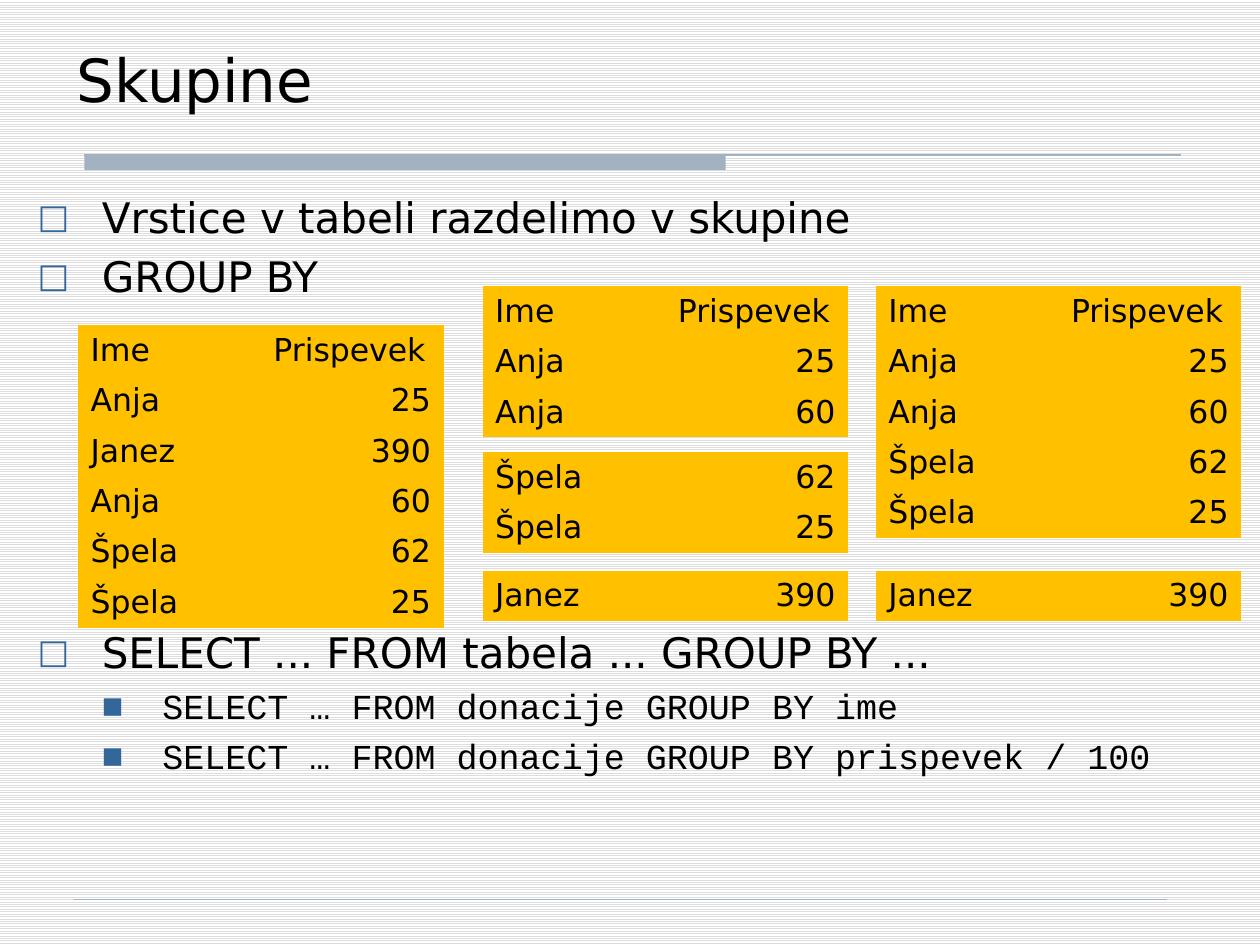
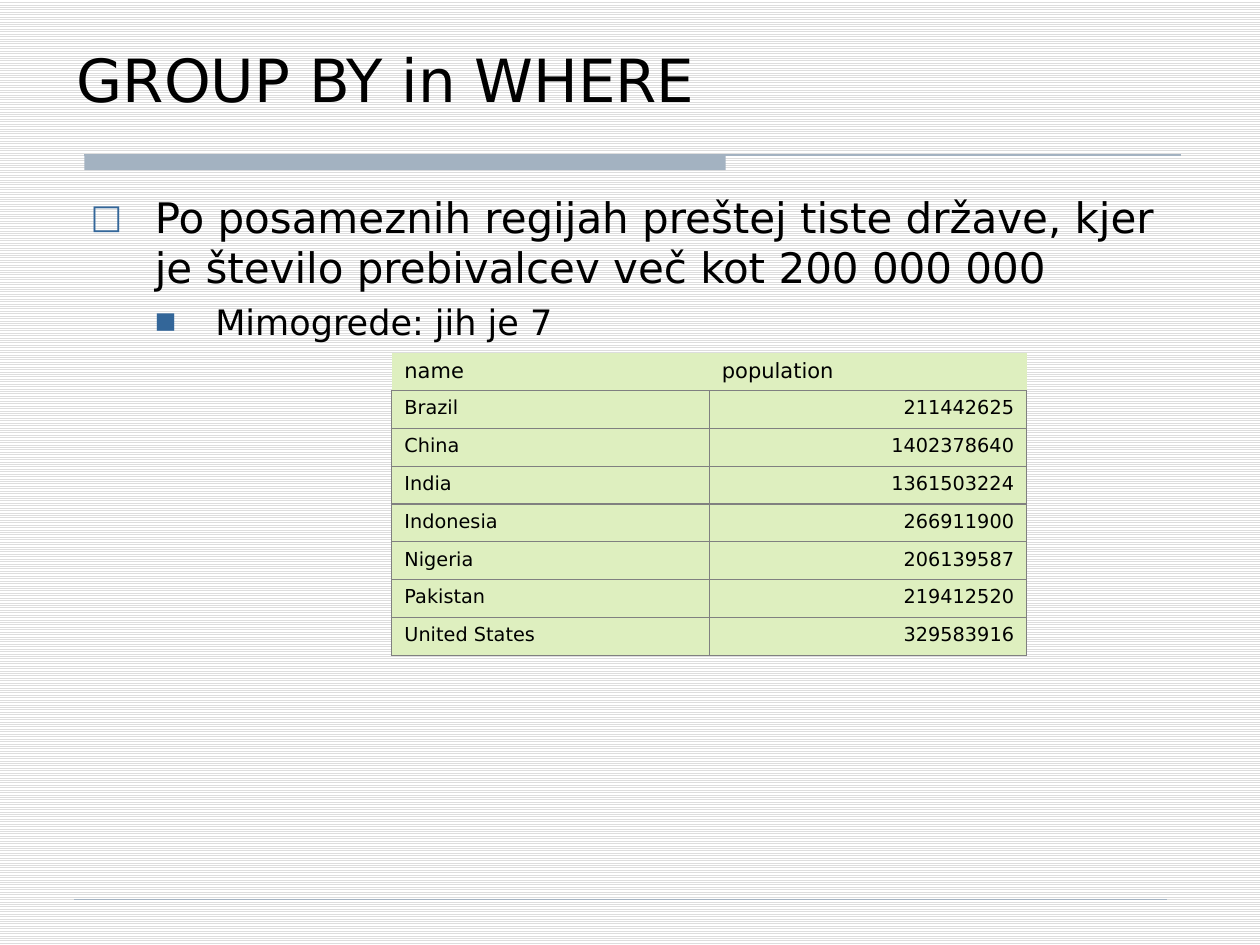
from lxml.etree import SubElement
from pptx import Presentation
from pptx.dml.color import RGBColor
from pptx.enum.dml import MSO_PATTERN
from pptx.enum.shapes import MSO_CONNECTOR, MSO_SHAPE
from pptx.enum.text import MSO_ANCHOR, MSO_AUTO_SIZE, PP_ALIGN
from pptx.oxml.ns import qn
from pptx.util import Inches, Pt

BLACK = RGBColor(0x00, 0x00, 0x00)
WHITE = RGBColor(0xFF, 0xFF, 0xFF)
STRIPE = RGBColor(0xDD, 0xDD, 0xDD)
STEEL = RGBColor(0xA3, 0xB2, 0xC1)
BLUE = RGBColor(0x33, 0x66, 0x99)
AMBER = RGBColor(0xFF, 0xC0, 0x00)
LIME = RGBColor(0xDE, 0xEF, 0xBF)
GREY = RGBColor(0x80, 0x80, 0x80)
SANS = "DejaVu Sans"
MONO = "Courier New"
PLAIN = "{2D5ABB26-0587-4C30-8999-92F81FD0307C}"  # table style without grid

# Bullet levels: sign, sign size, text indent, hanging indent
MARKS = [("□", 80, 0.51, 0.51), ("■", 65, 0.99, 0.48)]


def write(par, text, size=24, font=SANS, align=PP_ALIGN.LEFT, gap=0, level=None):
    """Fill a paragraph; a level gives it that level's bullet."""
    run = par.add_run()
    run.text = text
    run.font.size = Pt(size)
    run.font.name = font
    run.font.color.rgb = BLACK
    par.alignment = align
    par.space_before = Pt(gap)
    if level is None:
        return
    sign, scale, left, hang = MARKS[level]
    par.level = level
    props = par._p.get_or_add_pPr()
    props.set("marL", str(Inches(left)))
    props.set("indent", str(-Inches(hang)))
    SubElement(SubElement(props, qn("a:buClr")), qn("a:srgbClr"), val=str(BLUE))
    SubElement(props, qn("a:buSzPct"), val=str(scale * 1000))
    SubElement(props, qn("a:buFont"), typeface=SANS)
    SubElement(props, qn("a:buChar"), char=sign)


def edge(cell, sides):
    """Draw thin grey borders on the named sides of a cell."""
    props = cell._tc.get_or_add_tcPr()
    for spot, side in enumerate(sides):
        line = props.makeelement(qn("a:ln" + side), {"w": str(Pt(0.75))})
        fill = SubElement(line, qn("a:solidFill"))
        SubElement(fill, qn("a:srgbClr"), val=str(GREY))
        props.insert(spot, line)


# Content: bullets are (text, level, size, font, gap before)
# Tables are (left, top, column width, row height, rows)
head = ("Ime", "Prispevek")
anja = [("Anja", "25"), ("Anja", "60")]
spela = [("Špela", "62"), ("Špela", "25")]
janez = [("Janez", "390")]
mixed = [head, anja[0], janez[0], anja[1], *spela]
lands = [
    ("name", "population"),
    ("Brazil", "211442625"),
    ("China", "1402378640"),
    ("India", "1361503224"),
    ("Indonesia", "266911900"),
    ("Nigeria", "206139587"),
    ("Pakistan", "219412520"),
    ("United States", "329583916"),
]
pages = [
    {
        "title": "Skupine",
        "left": 0.2,
        "width": 9.69,
        "points": [
            ("Vrstice v tabeli razdelimo v skupine", 0, 24, SANS, 5),
            ("GROUP BY", 0, 24, SANS, 5),
            ("SELECT ... FROM tabela ... GROUP BY ...", 0, 24, SANS, 186),
            ("SELECT … FROM donacije GROUP BY ime", 1, 20, MONO, 4.5),
            ("SELECT … FROM donacije GROUP BY prispevek / 100", 1, 20, MONO, 4.5),
        ],
        "tables": [
            (0.62, 2.58, 1.45, 0.39, mixed),
            (3.83, 2.27, 1.45, 0.39, [head, *anja]),
            (3.83, 3.59, 1.45, 0.39, spela),
            (3.83, 4.53, 1.45, 0.39, janez),
            (6.95, 2.27, 1.45, 0.39, [head, *anja, *spela]),
            (6.95, 4.53, 1.45, 0.39, janez),
        ],
        "fill": AMBER,
        "size": 18,
        "grid": False,
    },
    {
        "title": "GROUP BY in WHERE",
        "left": 0.62,
        "width": 8.75,
        "points": [
            ("Po posameznih regijah preštej tiste države, kjer je število "
             "prebivalcev več kot 200 000 000", 0, 24, SANS, 5),
            ("Mimogrede: jih je 7", 1, 20, SANS, 4.5),
        ],
        "tables": [(3.11, 2.8, 2.52, 0.3, lands)],
        "fill": LIME,
        "size": 11,
        "grid": True,
    },
]

deck = Presentation()
deck.slide_width = Inches(10)
deck.slide_height = Inches(7.5)

for page in pages:
    slide = deck.slides.add_slide(deck.slide_layouts[5])
    shapes = slide.shapes

    # Striped background
    back = slide.background.fill
    back.patterned()
    back.pattern = MSO_PATTERN.LIGHT_HORIZONTAL
    back.fore_color.rgb = STRIPE
    back.back_color.rgb = WHITE

    # Band under the title, with its rule and the footer rule
    band = shapes.add_shape(
        MSO_SHAPE.RECTANGLE, Inches(0.67), Inches(1.23), Inches(5.09), Inches(0.12))
    band.shadow.inherit = False
    band.fill.solid()
    band.fill.fore_color.rgb = STEEL
    band.line.fill.background()
    for x, y, end, width in [(0.67, 1.23, 9.37, 0.75), (0.59, 7.14, 9.26, 0.25)]:
        rule = shapes.add_connector(
            MSO_CONNECTOR.STRAIGHT, Inches(x), Inches(y), Inches(end), Inches(y))
        rule.line.color.rgb = STEEL
        rule.line.width = Pt(width)
        SubElement(rule._element.spPr, qn("a:effectLst"))

    # Title
    title = shapes.title
    title.left, title.top = Inches(0.51), Inches(0.21)
    title.width, title.height = Inches(8.75), Inches(0.75)
    frame = title.text_frame
    frame.auto_size = MSO_AUTO_SIZE.NONE
    frame.vertical_anchor = MSO_ANCHOR.BOTTOM
    write(frame.paragraphs[0], page["title"], size=34)

    # Bullets
    body = shapes.add_textbox(
        Inches(page["left"]), Inches(1.47), Inches(page["width"]), Inches(5.51))
    frame = body.text_frame
    frame.word_wrap = True
    for spot, (text, level, size, font, gap) in enumerate(page["points"]):
        par = frame.add_paragraph() if spot else frame.paragraphs[0]
        write(par, text, size=size, font=font, gap=gap, level=level)

    # Tables
    for left, top, wide, high, rows in page["tables"]:
        table = shapes.add_table(
            len(rows), 2, Inches(left), Inches(top),
            Inches(2 * wide), Inches(high * len(rows))).table
        table.first_row = False
        table.horz_banding = False
        table._tbl.tblPr.find(qn("a:tableStyleId")).text = PLAIN
        for r, row in enumerate(rows):
            for c, text in enumerate(row):
                cell = table.cell(r, c)
                cell.fill.solid()
                cell.fill.fore_color.rgb = page["fill"]
                top_row = page["grid"] and r == 0
                if top_row or not page["grid"]:
                    cell.vertical_anchor = MSO_ANCHOR.MIDDLE
                if page["grid"]:
                    edge(cell, "B" if top_row else "LRTB")
                write(cell.text_frame.paragraphs[0], text,
                      size=12 if top_row else page["size"],
                      align=PP_ALIGN.RIGHT if text.isdigit() else PP_ALIGN.LEFT)

deck.save("out.pptx")
